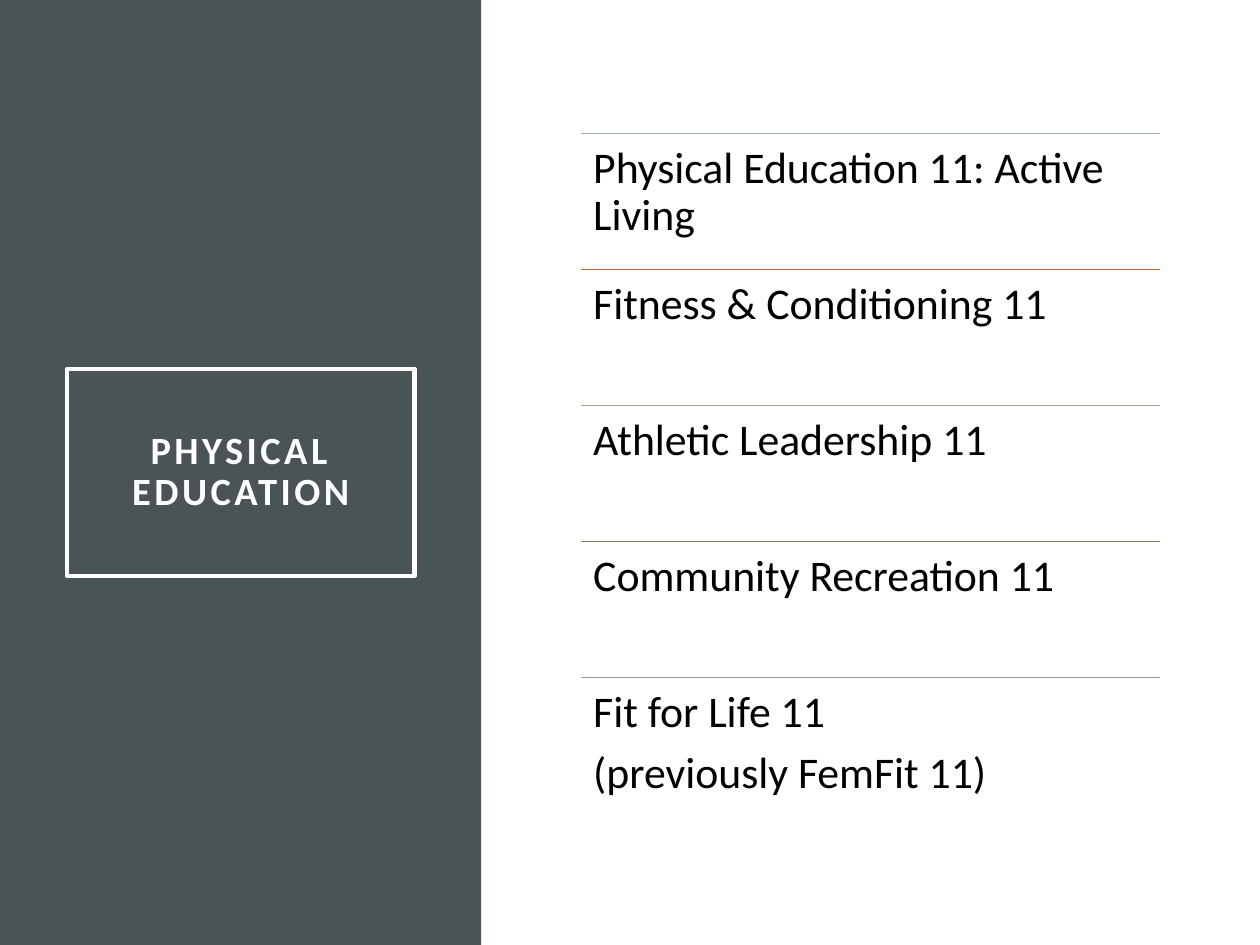
from lxml import etree
from pptx import Presentation
from pptx.dml.color import RGBColor
from pptx.enum.shapes import MSO_CONNECTOR, MSO_SHAPE
from pptx.enum.text import MSO_ANCHOR, PP_ALIGN
from pptx.oxml.ns import qn
from pptx.util import Cm, Pt

RECTANGLE = MSO_SHAPE.RECTANGLE
STRAIGHT = MSO_CONNECTOR.STRAIGHT
MIDDLE, TOP = MSO_ANCHOR.MIDDLE, MSO_ANCHOR.TOP
CENTER, LEFT = PP_ALIGN.CENTER, PP_ALIGN.LEFT

FONT = "Calibri"
WHITE = RGBColor(0xFF, 0xFF, 0xFF)
BLACK = RGBColor(0x00, 0x00, 0x00)
SLATE = RGBColor(0x4A, 0x53, 0x56)
BLUE_GREY = RGBColor(0x9B, 0xAF, 0xB5)
ORANGE = RGBColor(0xC9, 0x67, 0x31)
SAGE = RGBColor(0x9C, 0xA3, 0x83)
OLIVE = RGBColor(0x87, 0x79, 0x5D)
TAUPE = RGBColor(0xA0, 0x98, 0x8C)

COURSES = [
    ("Physical Education 11: Active Living", BLUE_GREY),
    ("Fitness & Conditioning 11", ORANGE),
    ("Athletic Leadership 11", SAGE),
    ("Community Recreation 11", OLIVE),
    ("Fit for Life 11\n(previously FemFit 11)", TAUPE),
]
LIST_LEFT, LIST_TOP = Cm(11.71), Cm(2.69)
LIST_WIDTH, ROW_HEIGHT = Cm(11.68), Cm(2.74)


def write_text(shape, text, size, color, align, anchor, inset, space_after=0):
    frame = shape.text_frame
    frame.word_wrap = True
    frame.vertical_anchor = anchor
    frame.margin_left = frame.margin_right = inset
    frame.margin_top = frame.margin_bottom = inset
    frame.text = text
    for paragraph in frame.paragraphs:
        paragraph.alignment = align
        paragraph.line_spacing = 0.9
        paragraph.space_after = Pt(space_after)
        for run in paragraph.runs:
            run.font.name = FONT
            run.font.size = Pt(size)
            run.font.color.rgb = color


def add_side_panel(slide, height):
    panel = slide.shapes.add_shape(RECTANGLE, 0, 0, Cm(9.7), height)
    panel.shadow.inherit = False
    panel.fill.solid()
    panel.fill.fore_color.rgb = SLATE
    panel.line.fill.background()


def add_framed_title(slide, title):
    frame = slide.shapes.add_shape(
        RECTANGLE, Cm(1.35), Cm(7.44), Cm(7.01), Cm(4.17))
    frame.shadow.inherit = False
    frame.fill.background()
    frame.line.color.rgb = WHITE
    frame.line.width = Pt(2.5)
    write_text(frame, title, 22, WHITE, CENTER, MIDDLE, Cm(0.51))
    font = frame.text_frame.paragraphs[0].runs[0].font
    font.bold = True
    # Letter spacing, in hundredths of a point
    font._element.set("spc", "200")


def add_course(slide, course, rule_color, top):
    """Add a thin rule with the course name below it."""
    rule = slide.shapes.add_connector(
        STRAIGHT, LIST_LEFT, top, LIST_LEFT + LIST_WIDTH, top)
    rule.line.color.rgb = rule_color
    rule.line.width = Pt(0.5)
    etree.SubElement(rule._element.spPr, qn("a:effectLst"))

    label = slide.shapes.add_textbox(LIST_LEFT, top, LIST_WIDTH, ROW_HEIGHT)
    write_text(label, course, 25, BLACK, LEFT, TOP, Cm(0.25), space_after=8)


def main():
    presentation = Presentation()
    presentation.slide_width = Cm(25.4)
    presentation.slide_height = Cm(19.05)
    slide = presentation.slides.add_slide(presentation.slide_layouts[6])

    add_side_panel(slide, presentation.slide_height)
    add_framed_title(slide, "PHYSICAL EDUCATION")
    for row, (course, rule_color) in enumerate(COURSES):
        add_course(slide, course, rule_color, LIST_TOP + row * ROW_HEIGHT)

    presentation.save("out.pptx")


if __name__ == "__main__":
    main()
